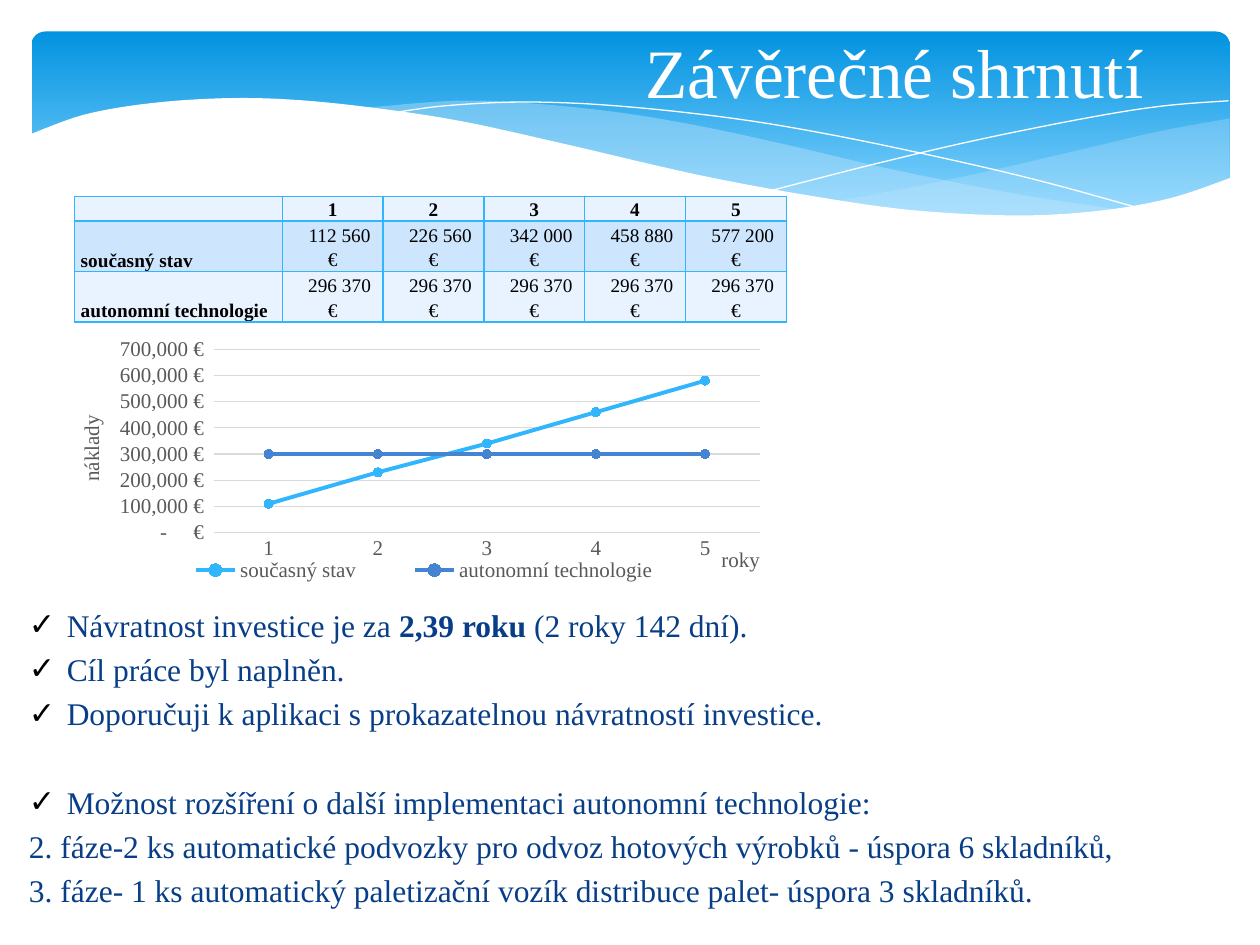
import pptx
import pptx.chart.data
import pptx.dml.color
import pptx.enum.chart
import pptx.enum.shapes
import pptx.enum.text
import pptx.oxml
import pptx.oxml.ns
import pptx.util
from pptx.util import Inches

FONT = "Times New Roman"
WHITE, BLACK, NAVY, GREY, RULE = "FFFFFF", "000000", "073E87", "595959", "D9D9D9"
SKY, BLUE = "31B6FD", "4584D3"
BANDS = ["E8F3FF", "CEE5FE", "E8F3FF"]
NAMESPACE = pptx.oxml.ns.nsdecls("a")
ALIGN = pptx.enum.text.PP_ALIGN
ANCHOR = pptx.enum.text.MSO_ANCHOR

# Content
TITLE = "Závěrečné shrnutí"
YEARS = ["1", "2", "3", "4", "5"]
COSTS = {
    "současný stav": [112560, 226560, 342000, 458880, 577200],
    "autonomní technologie": [296370] * 5,
}
SERIES_COLORS = [SKY, BLUE]
# Runs as (text, bold); bullet; space before in points
BODY = [
    ([("Návratnost investice je za ", False), ("2,39 roku", True),
      (" (2 roky 142 dní).", False)], True, 0),
    ([("Cíl práce byl naplněn.", False)], True, 3.6),
    ([("Doporučuji k aplikaci s prokazatelnou návratností investice.", False)], True, 3.6),
    ([("Možnost rozšíření o další implementaci autonomní technologie:", False)], True, 28.9),
    ([("2. fáze-2 ks automatické podvozky pro odvoz hotových výrobků - "
       "úspora 6 skladníků,", False)], False, 3.6),
    ([("3. fáze- 1 ks automatický paletizační vozík distribuce palet- "
       "úspora 3 skladníků.", False)], False, 3.6),
]

# Banner waves: curve through key points, then straight corners
RIGHT_WAVE = [(9.76, 0.94), (9.21, 1.04), (8.61, 1.18), (7.79, 1.37), (7.06, 1.52), (6.61, 1.6)]
RIGHT_WAVE_BACK = [(6.61, 1.6), (7.18, 1.67), (7.81, 1.72), (8.35, 1.72), (8.89, 1.66),
                   (9.35, 1.56), (9.76, 1.41)]
LONG_WAVE = [(8.93, 1.67), (8.07, 1.54), (7.06, 1.34), (6.29, 1.16), (5.55, 1), (4.89, 0.89),
             (4.2, 0.82), (3.61, 0.8), (2.86, 0.86)]
LONG_WAVE_BACK = [(2.86, 0.86), (3.62, 0.97), (4.49, 1.16), (5.66, 1.43), (6.5, 1.58),
                  (7.22, 1.68), (7.96, 1.73), (8.48, 1.72), (8.93, 1.67)]
WHITE_WAVE = [(9.77, 1.41), (9.3, 1.57), (8.75, 1.67), (8.09, 1.71), (7.26, 1.67), (6.47, 1.56),
              (5.55, 1.39), (4.47, 1.14), (3.65, 0.96), (2.92, 0.85), (2.3, 0.79), (1.77, 0.78),
              (1.19, 0.82), (0.67, 0.91), (0.23, 1.07)]
LINE_DOWN = [(3.09, 0.9), (3.53, 0.84), (4.16, 0.81), (4.89, 0.84), (5.82, 0.94), (6.65, 1.08),
             (7.6, 1.28), (8.31, 1.45), (9.07, 1.66)]
LINE_UP = [(6.13, 1.51), (6.95, 1.3), (7.76, 1.11), (8.66, 0.93), (9.24, 0.84), (9.75, 0.8)]


def rgb(color):
    return pptx.dml.color.RGBColor.from_string(color)


def set_font(font, size, color, bold=False):
    font.name, font.size, font.bold = FONT, pptx.util.Pt(size), bold
    font.color.rgb = rgb(color)


def add_text(paragraph, text, size=18, color=BLACK, bold=False, align=None):
    if align is not None:
        paragraph.alignment = align
    if not text:
        paragraph._p.append(pptx.oxml.parse_xml(
            f'<a:endParaRPr {NAMESPACE} sz="{int(size * 100)}"/>'))
        return
    for index, line in enumerate(text.split("\n")):
        if index:
            paragraph.add_line_break()
        run = paragraph.add_run()
        run.text = line
        set_font(run.font, size, color, bold)


def smooth(points, steps=6):
    """Catmull-Rom curve through the points."""
    padded = [points[0], *points, points[-1]]
    curve = [points[0]]
    for a, b, c, d in zip(padded, padded[1:], padded[2:], padded[3:]):
        for step in range(1, steps + 1):
            t = step / steps
            curve.append(tuple(
                0.5 * (2 * q + (r - p) * t + (2 * p - 5 * q + 4 * r - s) * t ** 2
                       + (3 * q - p - 3 * r + s) * t ** 3)
                for p, q, r, s in zip(a, b, c, d)))
    return curve


def add_wave(slide, points, fill=None, opacity=100):
    corners = [(Inches(x), Inches(y)) for x, y in points]
    builder = slide.shapes.build_freeform(*corners[0])
    builder.add_line_segments(corners[1:], close=fill is not None)
    shape = builder.convert_to_shape()
    shape.shadow.inherit = False
    if fill is None:
        shape.fill.background()
        shape.line.color.rgb = rgb(WHITE)
        shape.line.width = 0
        return
    shape.line.fill.background()
    shape.fill.solid()
    shape.fill.fore_color.rgb = rgb(fill)
    if opacity < 100:
        color = shape.fill._xPr.find(".//" + pptx.oxml.ns.qn("a:srgbClr"))
        color.append(pptx.oxml.parse_xml(f'<a:alpha {NAMESPACE} val="{opacity * 1000}"/>'))


def add_banner(slide):
    banner = slide.shapes.add_shape(pptx.enum.shapes.MSO_SHAPE.ROUNDED_RECTANGLE,
                                    Inches(0.25), Inches(0.25), Inches(9.51), Inches(1.56))
    banner.adjustments[0] = 0.07
    banner.shadow.inherit = False
    banner.line.fill.background()
    banner.fill.gradient()
    banner.fill.gradient_angle = 270
    for stop, (position, color) in zip(banner.fill.gradient_stops,
                                       [(0, "0293E0"), (0.9, "83D3FE")]):
        stop.position = position
        stop.color.rgb = rgb(color)
    add_wave(slide, smooth(RIGHT_WAVE) + smooth(RIGHT_WAVE_BACK), "C6E7FC", 29)
    add_wave(slide, smooth(LONG_WAVE) + smooth(LONG_WAVE_BACK), "C6E7FC", 40)
    add_wave(slide, smooth(LINE_DOWN))
    add_wave(slide, smooth(LINE_UP))
    add_wave(slide, smooth(WHITE_WAVE) + [(0.23, 2.24), (9.77, 2.24)], WHITE)


def place(slide, placeholder, left, top, width, height):
    """Bring a placeholder to the front and position it."""
    slide.shapes._spTree.append(placeholder._element)
    placeholder.left, placeholder.top = Inches(left), Inches(top)
    placeholder.width, placeholder.height = Inches(width), Inches(height)
    placeholder.text_frame.auto_size = pptx.enum.text.MSO_AUTO_SIZE.NONE
    return placeholder.text_frame


def add_body(frame):
    frame.vertical_anchor = ANCHOR.TOP
    for index, (runs, bullet, space) in enumerate(BODY):
        paragraph = frame.add_paragraph() if index else frame.paragraphs[0]
        properties = paragraph._p.get_or_add_pPr()
        indent = Inches(0.3) if bullet else 0
        properties.set("marL", str(indent))
        properties.set("indent", str(-indent))
        marks = ([f'<a:buClr {NAMESPACE}><a:srgbClr val="{BLACK}"/></a:buClr>',
                  f'<a:buChar {NAMESPACE} char="✓"/>'] if bullet
                 else [f"<a:buNone {NAMESPACE}/>"])
        for mark in marks:
            properties.append(pptx.oxml.parse_xml(mark))
        paragraph.space_before = pptx.util.Pt(space)
        for text, bold in runs:
            add_text(paragraph, text, color=NAVY, bold=bold, align=ALIGN.JUSTIFY)


def add_cost_table(slide):
    rows = [["", *YEARS]]
    rows += [[name] + [f"{value:,}".replace(",", " ") + "\n€" for value in values]
             for name, values in COSTS.items()]
    table = slide.shapes.add_table(3, 6, Inches(0.59), Inches(1.56),
                                   Inches(5.67), Inches(1)).table
    table.first_row = table.horz_banding = False
    for column, width in zip(table.columns, [1.65] + [0.8] * 5):
        column.width = Inches(width)
    for row, height in zip(table.rows, [0.19, 0.4, 0.4]):
        row.height = Inches(height)
    for i, row in enumerate(rows):
        for j, text in enumerate(row):
            cell = table.cell(i, j)
            heading = i == 0 or j == 0
            cell.margin_left = cell.margin_right = Inches(0.05)
            cell.margin_top = cell.margin_bottom = 0
            cell.vertical_anchor = ANCHOR.BOTTOM if heading else ANCHOR.MIDDLE
            paragraph = cell.text_frame.paragraphs[0]
            paragraph.line_spacing = 1.15
            add_text(paragraph, text, size=11, bold=heading,
                     align=ALIGN.CENTER if j else ALIGN.LEFT)
            if not heading:
                paragraph._p.get_or_add_pPr().set("indent", str(Inches(0.11)))
            for side in "LRTB":
                cell._tc.get_or_add_tcPr().append(pptx.oxml.parse_xml(
                    f'<a:ln{side} {NAMESPACE} w="12700"><a:solidFill>'
                    f'<a:srgbClr val="{SKY}"/></a:solidFill></a:ln{side}>'))
            cell.fill.solid()
            cell.fill.fore_color.rgb = rgb(BANDS[i])


def set_layout(element, index, x, y, width=None, height=None, inner=False):
    fields = [("layoutTarget", "inner")] if inner else []
    fields += [("xMode", "edge"), ("yMode", "edge"), ("x", x), ("y", y)]
    fields += [("w", width), ("h", height)] if width else []
    items = "".join(f'<c:{tag} val="{value}"/>' for tag, value in fields)
    for existing in element.findall(pptx.oxml.ns.qn("c:layout")):
        element.remove(existing)
    element.insert(index, pptx.oxml.parse_xml(
        f'<c:layout {pptx.oxml.ns.nsdecls("c")}>'
        f"<c:manualLayout>{items}</c:manualLayout></c:layout>"))


def add_cost_chart(slide):
    data = pptx.chart.data.CategoryChartData()
    data.categories = YEARS
    for name, values in COSTS.items():
        data.add_series(name, [round(value, -4) for value in values])
    chart = slide.shapes.add_chart(pptx.enum.chart.XL_CHART_TYPE.LINE_MARKERS, Inches(0.59),
                                   Inches(2.65), Inches(5.55), Inches(2.05), data).chart
    set_font(chart.font, 12, GREY)
    chart.has_title = False
    chart.has_legend = True
    chart.legend.position = pptx.enum.chart.XL_LEGEND_POSITION.BOTTOM
    chart.legend.include_in_layout = False
    set_font(chart.legend.font, 12, GREY)
    set_layout(chart.legend._element, 1, 0.1, 0.86, 0.8, 0.11)
    plot = chart.plots[0]
    plot.vary_by_categories = False
    set_layout(chart._chartSpace.chart.plotArea, 0, 0.2, 0.06, 0.78, 0.71, inner=True)
    for series, color in zip(plot.series, SERIES_COLORS):
        series.smooth = False
        series.format.line.color.rgb = rgb(color)
        series.format.line.width = pptx.util.Pt(2.25)
        series.marker.style = pptx.enum.chart.XL_MARKER_STYLE.CIRCLE
        series.marker.size = 5
        series.marker.format.fill.solid()
        series.marker.format.fill.fore_color.rgb = rgb(color)
        series.marker.format.line.color.rgb = rgb(color)
    for axis, title, x, y in [(chart.category_axis, "roky", 0.92, 0.81),
                              (chart.value_axis, "náklady", 0, 0.3)]:
        axis.major_tick_mark = axis.minor_tick_mark = pptx.enum.chart.XL_TICK_MARK.NONE
        set_font(axis.tick_labels.font, 12, GREY)
        add_text(axis.axis_title.text_frame.paragraphs[0], title, size=12, color=GREY)
        set_layout(axis.axis_title._element, 1, x, y)
    chart.category_axis.format.line.color.rgb = rgb(RULE)
    value_axis = chart.value_axis
    value_axis.minimum_scale, value_axis.maximum_scale, value_axis.major_unit = 0, 700000, 100000
    value_axis.format.line.fill.background()
    value_axis.major_gridlines.format.line.color.rgb = rgb(RULE)
    value_axis.major_gridlines.format.line.width = pptx.util.Pt(0.75)
    value_axis.tick_labels.number_format = (
        '_-* #,##0\\ [$€-1]_-;\\-* #,##0\\ [$€-1]_-;_-* "-"??\\ [$€-1]_-')
    value_axis.tick_labels.number_format_is_linked = False


def main():
    presentation = pptx.Presentation()
    presentation.slide_width, presentation.slide_height = Inches(10), Inches(7.5)
    slide = presentation.slides.add_slide(presentation.slide_layouts[1])
    title, body = slide.placeholders
    add_banner(slide)
    title_frame = place(slide, title, 4.7, 0.21, 4.8, 0.71)
    title_frame.vertical_anchor = ANCHOR.MIDDLE
    add_text(title_frame.paragraphs[0], TITLE, size=39.6, color=WHITE, align=ALIGN.CENTER)
    add_cost_chart(slide)
    add_body(place(slide, body, 0.13, 4.76, 9.69, 2.52))
    add_cost_table(slide)
    presentation.save("out.pptx")


if __name__ == "__main__":
    main()
